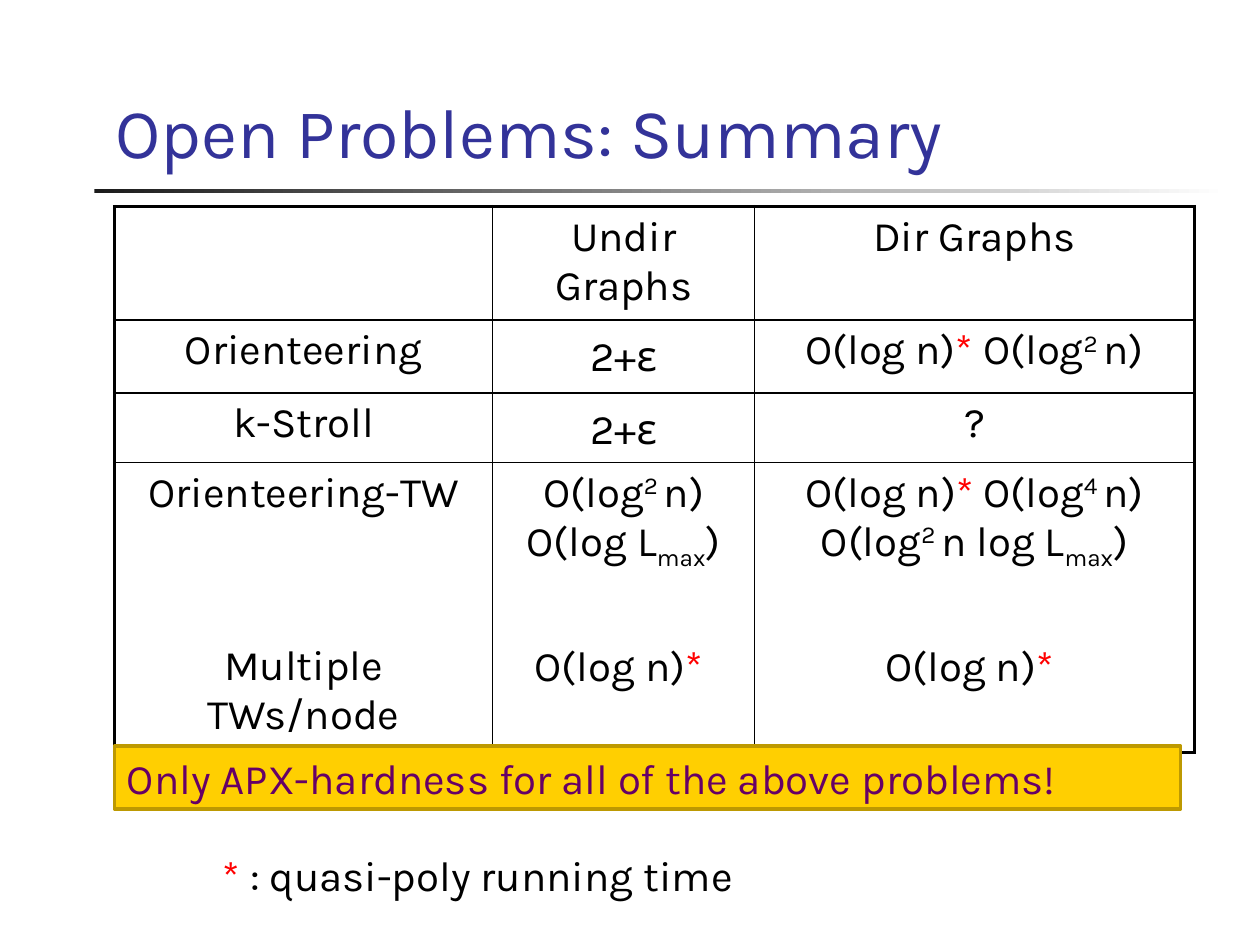
import pptx
import pptx.util
import pptx.dml.color
import pptx.enum.shapes
import pptx.enum.text
import pptx.oxml.ns
import lxml.etree

Inches = pptx.util.Inches
Pt = pptx.util.Pt
RGBColor = pptx.dml.color.RGBColor
Align = pptx.enum.text.PP_ALIGN
Anchor = pptx.enum.text.MSO_ANCHOR
qn = pptx.oxml.ns.qn

BLACK = RGBColor(0, 0, 0)
WHITE = RGBColor(255, 255, 255)
RED = RGBColor(255, 0, 0)
BLUE = RGBColor(0x33, 0x33, 0x99)
PURPLE = RGBColor(0x66, 0, 0x66)
GOLD = RGBColor(0xFF, 0xCF, 0x01)
BROWN = RGBColor(0xBD, 0x99, 0x01)
DARK = RGBColor(0x1C, 0x1C, 0x1C)

STAR = ("* ", "red")
SQUARE = ("2 ", "sup")
MAX = ("max", "sub")
RATIO = [["2+", ("ε", "greek")]]
LOG = ["O(log n)", STAR]
SHIFTS = {"sup": 30000, "sub": -25000}

WIDTHS = [3, 2.08, 3.49]
HEIGHTS = [0.9, 0.58, 0.55, 2.3]
CELLS = [
    [[], [["Undir Graphs"]], [["Dir Graphs"]]],
    [[["Orienteering"]], RATIO, [LOG + ["O(log", SQUARE, "n)"]]],
    [[["k-Stroll"]], RATIO, [["?"]]],
    [
        [["Orienteering-TW"], ["Multiple TWs/node"]],
        [["O(log", SQUARE, "n) O(log L", MAX, ")"], LOG],
        [LOG + ["O(log", ("4 ", "sup"), "n) O(log", SQUARE, "n log L", MAX, ")"], LOG],
    ],
]
GAPS = [71, 40, 40]


def write(frame, paras, size=24, color=BLACK, align=Align.LEFT, anchor=Anchor.TOP, gap=0):
    frame.word_wrap = True
    frame.vertical_anchor = anchor
    for index, parts in enumerate(paras):
        para = frame.paragraphs[0] if index == 0 else frame.add_paragraph()
        para.alignment = align
        if index:
            para.space_before = Pt(gap)
        for part in parts:
            text, kind = (part, "") if isinstance(part, str) else part
            run = para.add_run()
            run.text = text
            font = run.font
            font.size = Pt(size)
            font.name = "Noto Sans" if kind == "greek" else "Karla"
            font.color.rgb = RED if kind == "red" else color
            if kind in SHIFTS:
                font._element.set("baseline", str(SHIFTS[kind]))


def label(slide, box, parts, **style):
    shape = slide.shapes.add_textbox(*map(Inches, box))
    write(shape.text_frame, [parts], **style)


def block(slide, box):
    kind = pptx.enum.shapes.MSO_SHAPE.RECTANGLE
    shape = slide.shapes.add_shape(kind, *map(Inches, box))
    shape.shadow.inherit = False
    return shape


def rule(slide):
    shape = block(slide, (0.75, 1.5, 9, 0.03))
    shape.line.fill.background()
    shape.fill.gradient()
    shape.fill.gradient_angle = 0
    for stop, color, place in zip(shape.fill.gradient_stops, (DARK, WHITE), (0, 1)):
        stop.color.rgb = color
        stop.position = place


def banner(slide):
    shape = block(slide, (0.91, 5.92, 8.46, 0.5))
    shape.fill.solid()
    shape.fill.fore_color.rgb = GOLD
    shape.line.color.rgb = BROWN
    shape.line.width = Pt(2)
    write(shape.text_frame, [["Only APX-hardness for all of the above problems!"]], color=PURPLE)


def border(cell, outer):
    props = cell._tc.get_or_add_tcPr()
    for side in "LRTB":
        width = Pt(2.25 if outer[side] else 1)
        line = lxml.etree.SubElement(props, qn("a:ln" + side), w=str(width))
        fill = lxml.etree.SubElement(line, qn("a:solidFill"))
        lxml.etree.SubElement(fill, qn("a:srgbClr"), val=str(BLACK))


def grid(slide):
    rows, cols = len(HEIGHTS), len(WIDTHS)
    box = (0.91, 1.64, sum(WIDTHS), sum(HEIGHTS))
    table = slide.shapes.add_table(rows, cols, *map(Inches, box)).table
    table.first_row = table.horz_banding = False
    for col, width in zip(table.columns, WIDTHS):
        col.width = Inches(width)
    for row, height in zip(table.rows, HEIGHTS):
        row.height = Inches(height)
    for r, line in enumerate(CELLS):
        for c, paras in enumerate(line):
            cell = table.cell(r, c)
            border(cell, {"L": c == 0, "R": c == cols - 1, "T": r == 0, "B": r == rows - 1})
            cell.fill.background()
            write(cell.text_frame, paras, align=Align.CENTER, gap=GAPS[c])


def main():
    deck = pptx.Presentation()
    deck.slide_width, deck.slide_height = Inches(10), Inches(7.5)
    slide = deck.slides.add_slide(deck.slide_layouts[6])
    rule(slide)
    label(slide, (0.82, 0.17, 8.94, 1.25), ["Open Problems: Summary"],
          size=40, color=BLUE, anchor=Anchor.BOTTOM)
    label(slide, (1.67, 6.69, 6.67, 0.5), [("*", "red"), " : quasi-poly running time"])
    grid(slide)
    banner(slide)
    deck.save("out.pptx")


if __name__ == "__main__":
    main()
